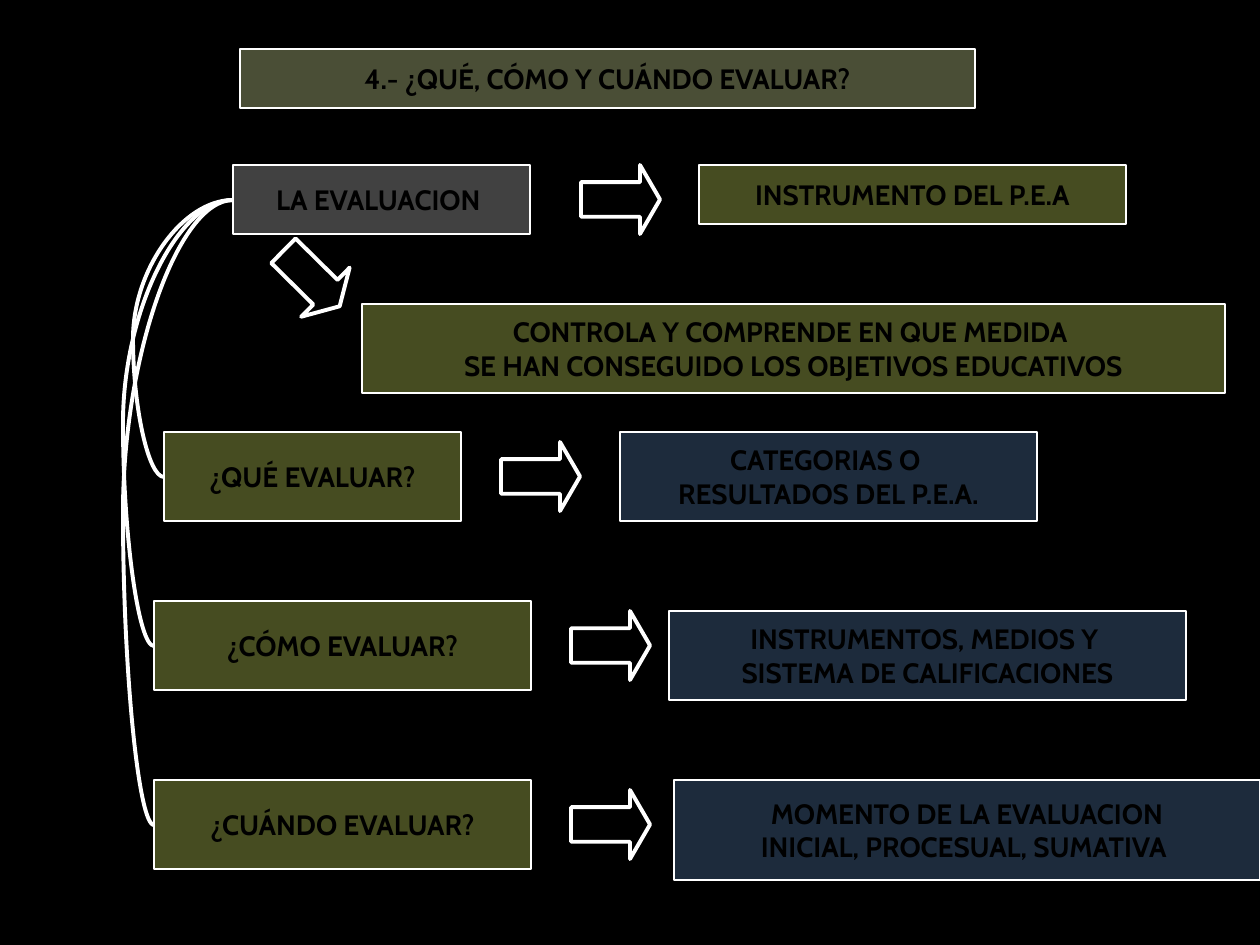
import pptx
import pptx.util
from lxml import etree
from pptx.dml.color import RGBColor
from pptx.enum.shapes import MSO_CONNECTOR, MSO_SHAPE
from pptx.enum.text import MSO_ANCHOR, PP_ALIGN
from pptx.oxml.ns import qn

PX = 914400 / 126
BLACK = RGBColor(0x00, 0x00, 0x00)
WHITE = RGBColor(0xFF, 0xFF, 0xFF)
SAGE = RGBColor(0xBB, 0xC3, 0x87)
OLIVE = RGBColor(0xB1, 0xBE, 0x53)
GRAY = RGBColor(0xA3, 0xA3, 0xA3)
BLUE = RGBColor(0x4A, 0x6D, 0x98)


def px(*lengths):
    """Turn pixel lengths into a list of EMU."""
    return [pptx.util.Emu(round(length * PX)) for length in lengths]


deck = pptx.Presentation()
deck.slide_width, deck.slide_height = px(1260, 945)
page = deck.slides.add_slide(deck.slide_layouts[6])
page.background.fill.solid()
page.background.fill.fore_color.rgb = BLACK

# Labelled boxes: left, top, width, height, fill, lines of text
boxes = [
    (240, 49, 735, 59, SAGE, ["4.- ¿QUÉ, CÓMO Y CUÁNDO EVALUAR?"]),
    (699, 165, 427, 59, OLIVE, ["INSTRUMENTO DEL P.E.A"]),
    (362, 304, 863, 89, OLIVE, ["CONTROLA Y COMPRENDE EN QUE MEDIDA ",
                                "SE HAN CONSEGUIDO LOS OBJETIVOS EDUCATIVOS"]),
    (233, 165, 297, 69, GRAY, ["LA EVALUACION "]),
    (164, 432, 297, 89, OLIVE, ["¿QUÉ EVALUAR?"]),
    (154, 601, 377, 89, OLIVE, ["¿CÓMO EVALUAR?"]),
    (154, 780, 377, 89, OLIVE, ["¿CUÁNDO EVALUAR?"]),
    (620, 432, 417, 89, BLUE, ["CATEGORIAS O ", "RESULTADOS DEL P.E.A."]),
    (674, 780, 586, 100, BLUE, ["MOMENTO DE LA EVALUACION",
                                "INICIAL, PROCESUAL, SUMATIVA "]),
    (669, 611, 517, 89, BLUE, ["INSTRUMENTOS, MEDIOS Y ",
                               "SISTEMA DE CALIFICACIONES"]),
]
for left, top, width, height, color, lines in boxes:
    box = page.shapes.add_shape(MSO_SHAPE.RECTANGLE, *px(left, top, width, height))
    box.shadow.inherit = False
    box.fill.solid()
    box.fill.fore_color.rgb = color
    srgb = box.fill._xPr.find(qn("a:solidFill")).find(qn("a:srgbClr"))
    etree.SubElement(srgb, qn("a:alpha")).set("val", "40000")
    box.line.color.rgb = WHITE
    box.line.width = pptx.util.Pt(0.75)
    frame = box.text_frame
    frame.word_wrap = False
    frame.vertical_anchor = MSO_ANCHOR.MIDDLE
    for index, line in enumerate(lines):
        para = frame.add_paragraph() if index else frame.paragraphs[0]
        para.alignment = PP_ALIGN.CENTER
        span = para.add_run()
        span.text = line
        span.font.name = "Cabin"
        span.font.size = pptx.util.Pt(16)
        span.font.bold = True
        span.font.color.rgb = BLACK

# Curves from the evaluation box to each question, bulging past its left side
start_x, start_y, bulge = 233, 200, 31
for end_x, end_y in [(164, 477), (154, 646), (154, 825)]:
    curve = page.shapes.add_connector(
        MSO_CONNECTOR.CURVE, *px(start_x, start_y, end_x, end_y))
    curve.line.color.rgb = WHITE
    curve.line.width = pptx.util.Pt(2.25)
    properties = curve._element.spPr
    etree.SubElement(properties, qn("a:effectLst"))
    geometry = properties.find(qn("a:prstGeom"))
    guides = geometry.find(qn("a:avLst"))
    if guides is None:
        guides = etree.SubElement(geometry, qn("a:avLst"))
    bend = round(100000 * (1 + bulge / (start_x - end_x)))
    guide = etree.SubElement(guides, qn("a:gd"))
    guide.set("name", "adj1")
    guide.set("fmla", f"val {bend}")

# Block arrows: left, top, rotation
for left, top, rotation in [(581, 165, 0), (501, 442, 0), (571, 611, 0),
                            (571, 790, 0), (272, 244, 44.6)]:
    arrow = page.shapes.add_shape(MSO_SHAPE.RIGHT_ARROW, *px(left, top, 79, 69))
    arrow.adjustments[0] = 0.5
    arrow.adjustments[1] = 0.29
    arrow.rotation = rotation
    arrow.shadow.inherit = False
    arrow.fill.background()
    arrow.line.color.rgb = WHITE
    arrow.line.width = pptx.util.Pt(2.25)

deck.save("out.pptx")
